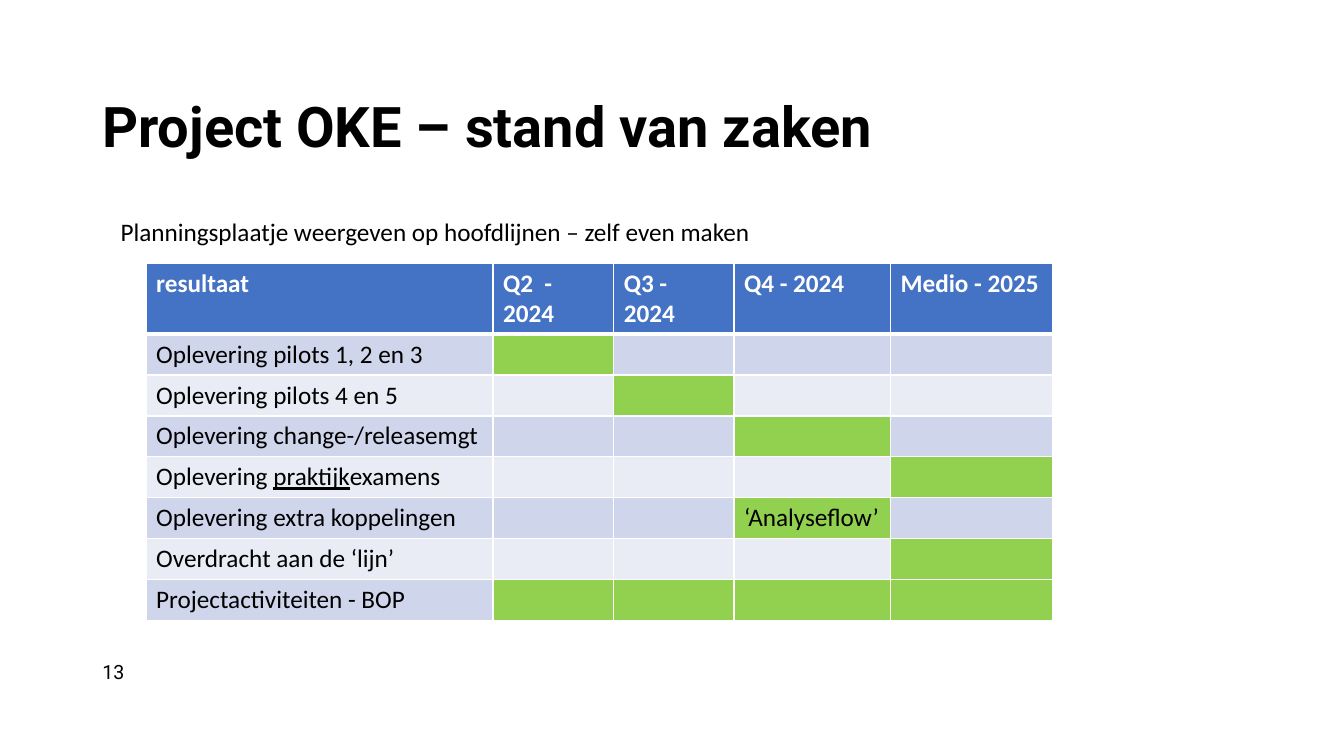
"""Build the project planning slide with its table of quarters."""
from lxml.etree import SubElement
from pptx import Presentation
from pptx.dml.color import RGBColor
from pptx.enum.text import MSO_ANCHOR
from pptx.oxml.ns import qn
from pptx.util import Pt

TEXTS = [
    ("Project OKE – stand van zaken", (66, 52, 828, 81), "Roboto", 40, True),
    ("13", (66, 468, 216, 24), "Roboto", 14, False),
    ("Planningsplaatje weergeven op hoofdlijnen – zelf even maken",
     (79, 151, 644, 73), "Calibri", 18, False),
]
HEADS = ["resultaat", "Q2  - 2024", "Q3 - 2024", "Q4 - 2024", "Medio - 2025"]
ROWS = [
    (["Oplevering pilots 1, 2 en 3"], {1: ""}),
    (["Oplevering pilots 4 en 5"], {2: ""}),
    (["Oplevering change-/releasemgt"], {3: ""}),
    (["Oplevering ", "praktijk", "examens"], {4: ""}),
    (["Oplevering extra koppelingen"], {3: "‘Analyseflow’"}),
    (["Overdracht aan de ‘lijn’"], {4: ""}),
    (["Projectactiviteiten - BOP"], {1: "", 2: "", 3: "", 4: ""}),
]
WIDTHS = [247.8, 86.2, 86, 111.8, 116]
LEFT, TOP, HEAD, ROW = 104.4, 187.9, 50.8, 29.2
BLUE, GREEN, WHITE, BLACK = "4472C4", "92D050", "FFFFFF", "000000"
BANDS = ["CFD5EA", "E9EBF5"]


def color(code):
    return RGBColor.from_string(code)


def style(para, face, size, code, bold):
    font = para.font
    font.name, font.size, font.bold = face, Pt(size), bold
    font.color.rgb = color(code)


def border(cell, widths):
    props = cell._tc.get_or_add_tcPr()
    for side, width in zip("LRTB", widths):
        line = SubElement(props, qn(f"a:ln{side}"), w=str(Pt(width)))
        fill = SubElement(line, qn("a:solidFill"))
        SubElement(fill, qn("a:srgbClr"), val=WHITE)


def put(cell, parts, fill, code, bold, widths):
    border(cell, widths)
    cell.fill.solid()
    cell.fill.fore_color.rgb = color(fill)
    para = cell.text_frame.paragraphs[0]
    style(para, "Calibri", 18, code, bold)
    for spot, part in enumerate(parts):
        run = para.add_run()
        run.text = part
        if spot == 1:
            run.font.underline = True


def main():
    deck = Presentation()
    deck.slide_width, deck.slide_height = Pt(960), Pt(540)
    slide = deck.slides.add_slide(deck.slide_layouts[6])

    for text, place, face, size, bold in TEXTS:
        frame = slide.shapes.add_textbox(*map(Pt, place)).text_frame
        frame.word_wrap = True
        para = frame.paragraphs[0]
        para.text = text
        style(para, face, size, BLACK, bold)
        if bold:
            frame.vertical_anchor = MSO_ANCHOR.MIDDLE
            para.line_spacing = 0.9

    high = HEAD + ROW * len(ROWS)
    table = slide.shapes.add_table(
        len(ROWS) + 1, len(HEADS),
        Pt(LEFT), Pt(TOP), Pt(sum(WIDTHS)), Pt(high)).table
    for column, width in zip(table.columns, WIDTHS):
        column.width = Pt(width)
    for index, row in enumerate(table.rows):
        row.height = Pt(ROW if index else HEAD)

    for col, head in enumerate(HEADS):
        put(table.cell(0, col), [head], BLUE, WHITE, True, (1, 1, 1, 3))
    for index, (label, marks) in enumerate(ROWS, 1):
        band = BANDS[(index - 1) % 2]
        top = 3 if index == 1 else 1
        for col in range(len(HEADS)):
            mark = marks.get(col)
            parts = label if col == 0 else [mark] if mark else []
            fill = band if mark is None else GREEN
            put(table.cell(index, col), parts, fill, BLACK, False,
                (1, 1, top, 1))

    deck.save("out.pptx")


if __name__ == "__main__":
    main()
